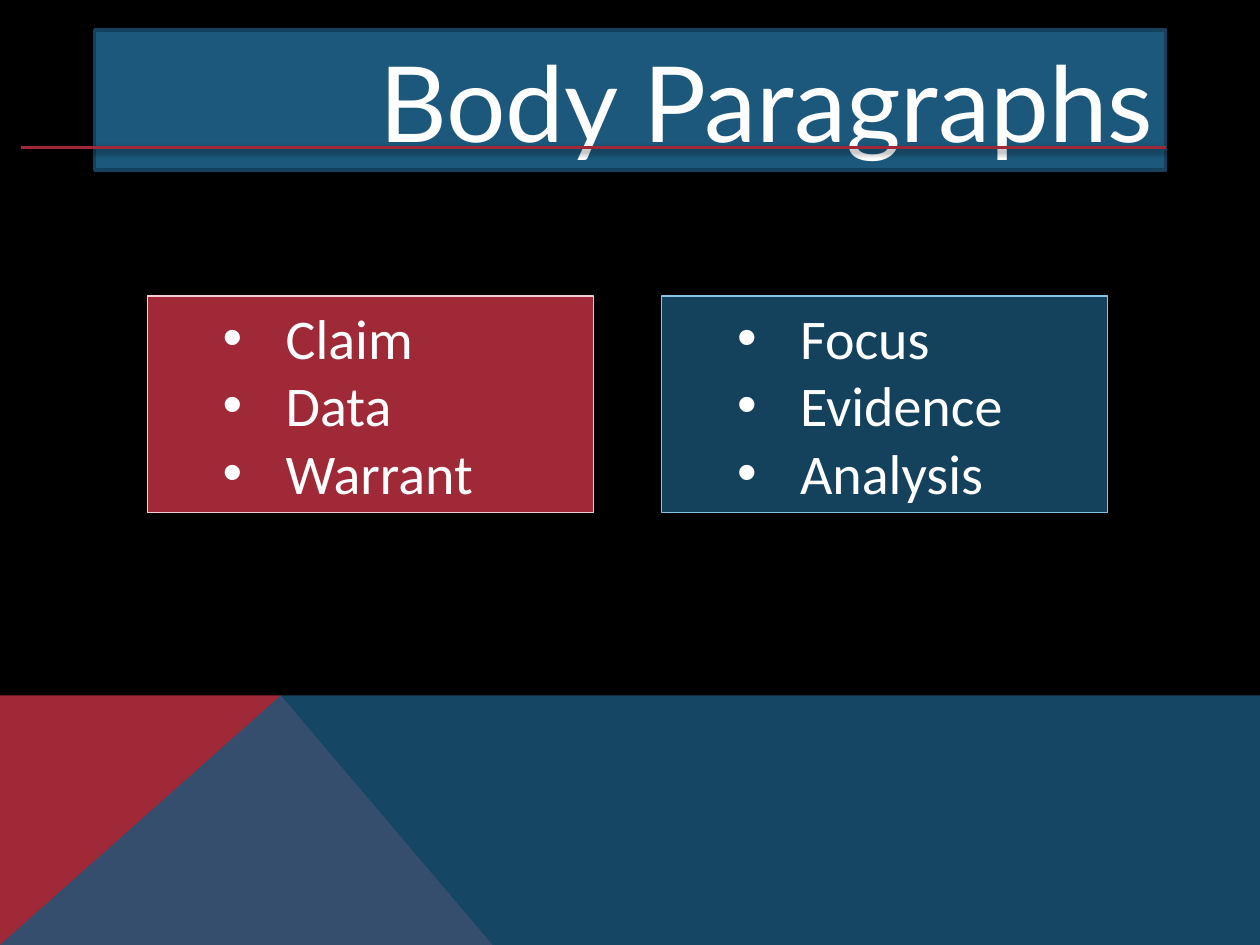
from dataclasses import dataclass

from lxml import etree
from pptx import Presentation
from pptx.dml.color import RGBColor
from pptx.enum.shapes import MSO_CONNECTOR, MSO_SHAPE
from pptx.enum.text import MSO_AUTO_SIZE, PP_ALIGN
from pptx.oxml.ns import qn
from pptx.util import Cm, Pt

RECT = MSO_SHAPE.RECTANGLE
STRAIGHT = MSO_CONNECTOR.STRAIGHT
GROW = MSO_AUTO_SIZE.SHAPE_TO_FIT_TEXT
LEFT, RIGHT = PP_ALIGN.LEFT, PP_ALIGN.RIGHT


@dataclass(frozen=True)
class Theme:
    back: str = "000000"
    text: str = "FFFFFF"
    red: str = "9F2936"
    blush: str = "F2CED2"
    blue: str = "1B587C"
    edge: str = "14415C"
    navy: str = "14425D"
    sky: str = "89C3E5"
    head: str = "Lato"
    body: str = "Calibri"
    big: int = 60
    mid: int = 32
    thin: float = 0.75
    thick: float = 2


def add(node, tag, **attrs):
    return etree.SubElement(node, qn(tag), {k: str(v) for k, v in attrs.items()})


class Deck:
    def __init__(self, theme, wide, high):
        self.theme = theme
        self.show = Presentation()
        self.show.slide_width, self.show.slide_height = Cm(wide), Cm(high)
        self.slide = self.show.slides.add_slide(self.show.slide_layouts[6])
        self.paint(self.slide.background.fill, theme.back)

    def paint(self, fill, color):
        fill.solid()
        fill.fore_color.rgb = RGBColor.from_string(color)

    def border(self, line, color, width):
        self.paint(line.fill, color)
        line.width = Pt(width)

    def panel(self, points, color, alpha=100):
        spots = [(Cm(x), Cm(y)) for x, y in points]
        maker = self.slide.shapes.build_freeform(*spots[0])
        maker.add_line_segments(spots[1:])
        shape = maker.convert_to_shape()
        shape.shadow.inherit = False
        self.paint(shape.fill, color)
        shape.line.fill.background()
        if alpha < 100:
            tint = shape.fill._xPr.find(".//" + qn("a:srgbClr"))
            add(tint, "a:alpha", val=alpha * 1000)

    def box(self, place, text, fill, edge, width, font, size, align=LEFT):
        shape = self.slide.shapes.add_shape(RECT, *map(Cm, place))
        shape.shadow.inherit = False
        self.paint(shape.fill, fill)
        self.border(shape.line, edge, width)
        frame = shape.text_frame
        frame.text = text
        frame.word_wrap = True
        frame.auto_size = GROW
        for para in frame.paragraphs:
            para.alignment = align
            for run in para.runs:
                run.font.name = font
                run.font.size = Pt(size)
                run.font.color.rgb = RGBColor.from_string(self.theme.text)
        return frame

    def title(self, place, text):
        t = self.theme
        self.box(place, text, t.blue, t.edge, t.thick, t.head, t.big, RIGHT)

    def bullets(self, place, items, fill, edge):
        t = self.theme
        frame = self.box(place, "\n".join(items), fill, edge, t.thin, t.body, t.mid)
        for para in frame.paragraphs:
            para.level = 1
            props = para._p.get_or_add_pPr()
            props.set("marL", str(Cm(2.54)))
            props.set("indent", str(-Cm(1.27)))
            add(props, "a:buFont", typeface="Arial")
            add(props, "a:buChar", char="•")

    def rule(self, left, right, y):
        line = self.slide.shapes.add_connector(
            STRAIGHT, Cm(left), Cm(y), Cm(right), Cm(y))
        self.border(line.line, self.theme.red, self.theme.thick)
        effect = add(line._element.spPr, "a:effectLst")
        shade = add(effect, "a:outerShdw", blurRad=Pt(3.1), dist=Pt(1.6),
                    dir=90 * 60000, rotWithShape=0)
        tint = add(shade, "a:srgbClr", val=self.theme.back)
        add(tint, "a:alpha", val=38000)


def main():
    theme = Theme()
    wide, high = 25.4, 19.05
    top, peak = 14.02, 5.66
    deck = Deck(theme, wide, high)
    deck.panel([(0, high), (0, top), (peak, top), (9.93, high)], theme.red)
    deck.panel([(0, high), (peak, top), (wide, top), (wide, high)], theme.blue, 80)

    deck.bullets((2.97, 5.97, 8.99, 4.37), ["Claim", "Data", "Warrant"],
                 theme.red, theme.blush)
    deck.title((1.91, 0.61, 21.59, 2.82), "Body Paragraphs")
    deck.rule(0.43, 23.5, 2.97)
    deck.bullets((13.34, 5.97, 8.99, 4.37), ["Focus", "Evidence", "Analysis"],
                 theme.navy, theme.sky)
    deck.show.save("out.pptx")


if __name__ == "__main__":
    main()
